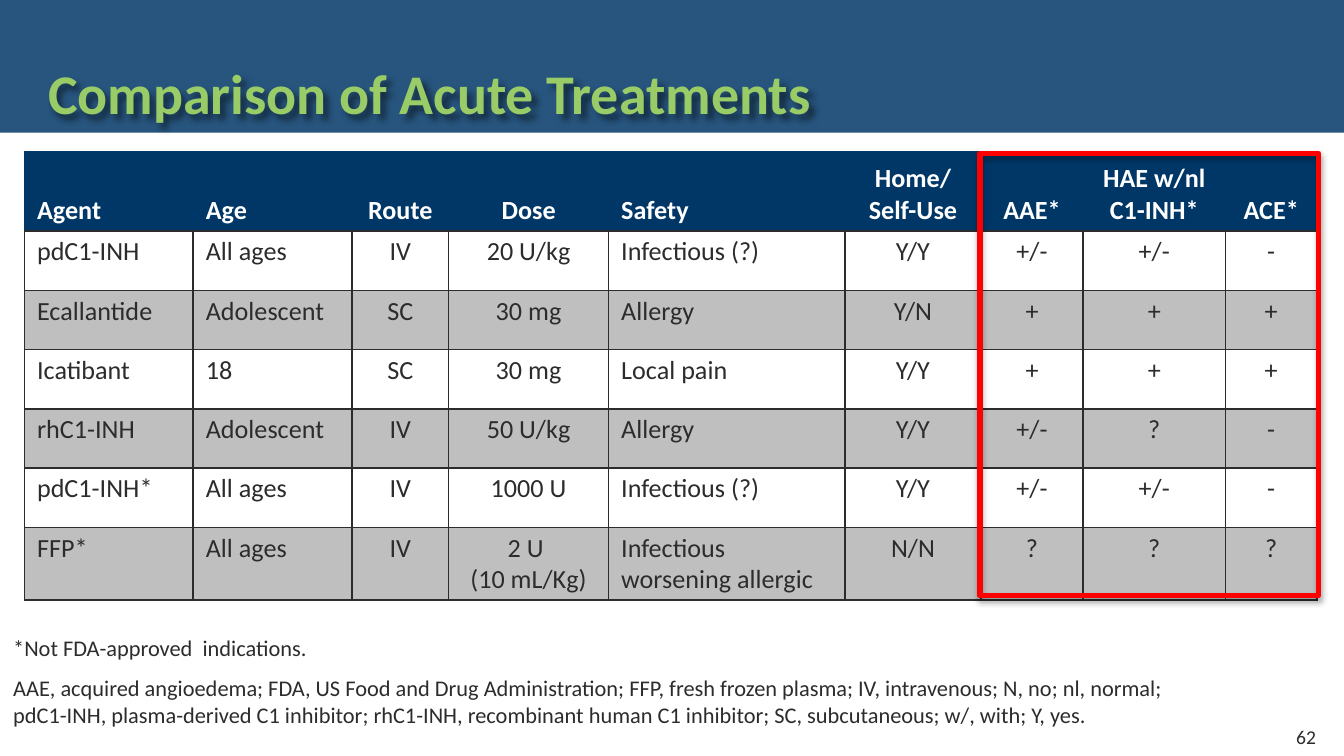
import pptx
import pptx.util
import pptx.oxml
import pptx.dml.color
import pptx.enum.shapes
import pptx.enum.text
from pptx.util import Cm, Pt

ANCHOR = pptx.enum.text.MSO_ANCHOR
ALIGN = pptx.enum.text.PP_ALIGN
RECTANGLE = pptx.enum.shapes.MSO_SHAPE.RECTANGLE
NAMESPACE = 'xmlns:a="http://schemas.openxmlformats.org/drawingml/2006/main"'
FONT = "Calibri"

# Content
COLORS = {"navy": "003767", "band": "27557E", "green": "99CC67", "ink": "2C2C2C",
          "gray": "BFBFBF", "white": "FFFFFF", "red": "FF0000", "black": "000000"}
TITLE = "Comparison of Acute Treatments"
HEADER = ["Agent", "Age", "Route", "Dose", "Safety", "Home/\nSelf-Use",
          "AAE*", "HAE w/nl C1-INH*", "ACE*"]
TREATMENTS = [
    ["pdC1-INH", "All ages", "IV", "20 U/kg", "Infectious (?)", "Y/Y", "+/-", "+/-", "-"],
    ["Ecallantide", "Adolescent", "SC", "30 mg", "Allergy", "Y/N", "+", "+", "+"],
    ["Icatibant", "18", "SC", "30 mg", "Local pain", "Y/Y", "+", "+", "+"],
    ["rhC1-INH", "Adolescent", "IV", "50 U/kg", "Allergy", "Y/Y", "+/-", "?", "-"],
    ["pdC1-INH*", "All ages", "IV", "1000 U", "Infectious (?)", "Y/Y", "+/-", "+/-", "-"],
    ["FFP*", "All ages", "IV", "2 U \v(10 mL/Kg)", "Infectious worsening allergic",
     "N/N", "?", "?", "?"],
]
FOOTNOTE = "*Not FDA-approved  indications."
ABBREVIATIONS = (
    "AAE, acquired angioedema; FDA, US Food and Drug Administration; FFP, fresh frozen "
    "plasma; IV, intravenous; N, no; nl, normal; pdC1-INH, plasma-derived C1 inhibitor; "
    "rhC1-INH, recombinant human C1 inhibitor; SC, subcutaneous; w/, with; Y, yes.")
PAGE_NUMBER = "62"

# Table layout in centimetres
COLUMN_WIDTHS = [3.19, 3, 1.83, 3.02, 4.47, 2.57, 1.93, 2.69, 1.73]
ROW_HEIGHTS = [1.5] + [1.12] * 5 + [1.3]
TABLE_LEFT, TABLE_TOP = 0.46, 2.87
LEFT_ALIGNED = {"Agent", "Age", "Safety"}


def color(name):
    return pptx.dml.color.RGBColor.from_string(COLORS[name])


def style_text(frame, size, color_name, bold=False, align=ALIGN.LEFT):
    for paragraph in frame.paragraphs:
        paragraph.alignment = align
        font = paragraph.font
        font.name, font.size, font.bold = FONT, Pt(size), bold
        font.color.rgb = color(color_name)


def add_text(slide, box, text, size, color_name, bold=False, align=ALIGN.LEFT,
             anchor=ANCHOR.TOP, wrap=True):
    shape = slide.shapes.add_textbox(*map(Cm, box))
    frame = shape.text_frame
    frame.text, frame.word_wrap, frame.vertical_anchor = text, wrap, anchor
    style_text(frame, size, color_name, bold, align)
    return shape


def add_shadow(shape, blur, distance, angle, opacity):
    shape.shadow.inherit = False
    effects = shape._element.spPr.find(pptx.oxml.ns.qn("a:effectLst"))
    effects.append(pptx.oxml.parse_xml(
        f'<a:outerShdw {NAMESPACE} blurRad="{Pt(blur)}" dist="{Pt(distance)}" '
        f'dir="{angle * 60000}" algn="tl" rotWithShape="0"><a:srgbClr val="{COLORS["black"]}">'
        f'<a:alpha val="{opacity * 1000}"/></a:srgbClr></a:outerShdw>'))


def set_borders(cell, sides, bottom):
    properties = cell._tc.get_or_add_tcPr()
    for side, name in zip("LRTB", (sides, sides, sides, bottom)):
        properties.append(pptx.oxml.parse_xml(
            f'<a:ln{side} {NAMESPACE} w="{Pt(1)}"><a:solidFill>'
            f'<a:srgbClr val="{COLORS[name]}"/></a:solidFill></a:ln{side}>'))


def add_treatment_table(slide):
    rows = [HEADER] + TREATMENTS
    table = slide.shapes.add_table(
        len(rows), len(HEADER), Cm(TABLE_LEFT), Cm(TABLE_TOP),
        Cm(sum(COLUMN_WIDTHS)), Cm(sum(ROW_HEIGHTS))).table
    for column, width in zip(table.columns, COLUMN_WIDTHS):
        column.width = Cm(width)
    for row, height in zip(table.rows, ROW_HEIGHTS):
        row.height = Cm(height)
    for r, values in enumerate(rows):
        is_header = r == 0
        fill = "navy" if is_header else "white" if r % 2 else "gray"
        for c, value in enumerate(values):
            cell = table.cell(r, c)
            cell.text = value
            cell.margin_left = cell.margin_right = Cm(0.24)
            cell.margin_top = cell.margin_bottom = Cm(0.09)
            cell.vertical_anchor = ANCHOR.BOTTOM if is_header else ANCHOR.TOP
            align = ALIGN.LEFT if HEADER[c] in LEFT_ALIGNED else ALIGN.CENTER
            style_text(cell.text_frame, 14, "white" if is_header else "ink", is_header, align)
            set_borders(cell, "navy" if is_header else "ink", "ink")
            cell.fill.solid()
            cell.fill.fore_color.rgb = color(fill)


def main():
    presentation = pptx.Presentation()
    presentation.slide_width, presentation.slide_height = Cm(25.4), Cm(14.29)
    slide = presentation.slides.add_slide(presentation.slide_layouts[6])

    # Title band
    band = slide.shapes.add_shape(RECTANGLE, 0, 0, presentation.slide_width, Cm(2.51))
    band.shadow.inherit = False
    band.fill.solid()
    band.fill.fore_color.rgb = color("band")
    band.line.fill.background()
    title = add_text(slide, (0.66, 0.64, 22.71, 1.88), TITLE, 30, "green",
                     bold=True, anchor=ANCHOR.BOTTOM)
    title.text_frame.paragraphs[0].line_spacing = 0.9
    add_shadow(title, blur=4, distance=3, angle=45, opacity=50)

    add_treatment_table(slide)

    # Notes below the table
    add_text(slide, (0, 12.62, 22.38, 1.27), ABBREVIATIONS, 12, "ink")

    # Frame around the off-label columns
    frame = slide.shapes.add_shape(RECTANGLE, Cm(18.52), Cm(2.9), Cm(6.4), Cm(8.36))
    frame.fill.background()
    frame.line.color.rgb = color("red")
    frame.line.width = Pt(3)
    add_shadow(frame, blur=3.1, distance=1.8, angle=90, opacity=35)

    add_text(slide, (0, 11.86, 6.2, 0.76), FOOTNOTE, 12, "ink", wrap=False)
    add_text(slide, (23.95, 13.54, 1.17, 0.76), PAGE_NUMBER, 10.5, "ink",
             align=ALIGN.RIGHT, anchor=ANCHOR.MIDDLE)

    presentation.save("out.pptx")


if __name__ == "__main__":
    main()
